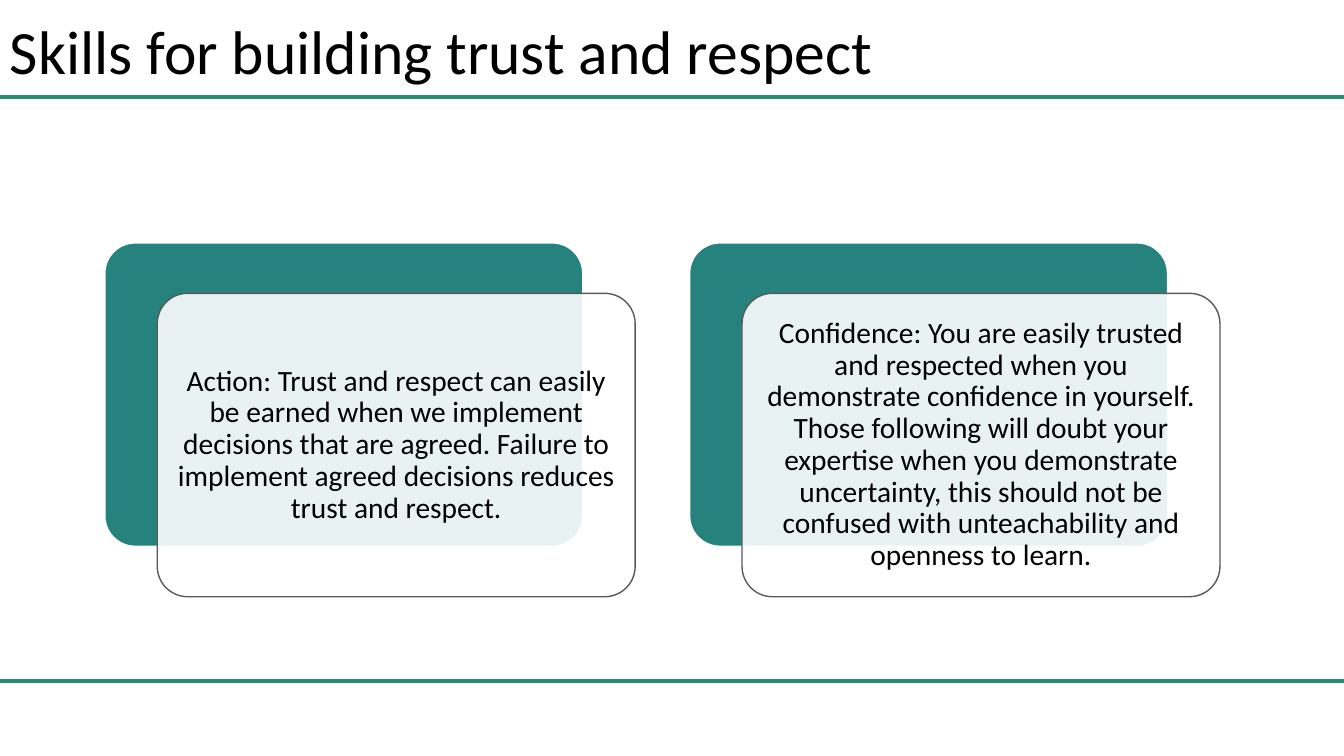
from dataclasses import dataclass

import pptx
import pptx.dml.color
import pptx.enum.shapes
import pptx.enum.text
import pptx.oxml
import pptx.oxml.ns
import pptx.shapes.autoshape
import pptx.slide
import pptx.util

Inches = pptx.util.Inches
Pt = pptx.util.Pt
RGBColor = pptx.dml.color.RGBColor
PP_ALIGN = pptx.enum.text.PP_ALIGN

GREEN = RGBColor(0x2B, 0x8D, 0x6F)
TEAL = RGBColor(0x25, 0x82, 0x7D)
GREY = RGBColor(0x59, 0x59, 0x59)
WHITE = RGBColor(0xFF, 0xFF, 0xFF)
BLACK = RGBColor(0x00, 0x00, 0x00)

SLIDE_W, SLIDE_H = 13.33, 7.5
RULE_YS = (6.76, 0.96)
CARD_W, CARD_H, CARD_TOP = 4.74, 3.01, 2.41
SHIFT_X, SHIFT_Y = 0.52, 0.5  # front panel relative to the back panel
PAD = 0.09


@dataclass(frozen=True)
class Card:
    left: float
    text: str


CARDS = (
    Card(1.04, "Action: Trust and respect can easily be earned when we implement "
               "decisions that are agreed. Failure to implement agreed decisions "
               "reduces trust and respect."),
    Card(6.84, "Confidence: You are easily trusted and respected when you "
               "demonstrate confidence in yourself. Those following will doubt "
               "your expertise when you demonstrate uncertainty, this should not "
               "be confused with unteachability and openness to learn."),
)


def add_rule(s: pptx.slide.Slide, y: float) -> None:
    sp = s.shapes.add_connector(
        pptx.enum.shapes.MSO_CONNECTOR.STRAIGHT,
        Inches(0), Inches(y), Inches(SLIDE_W), Inches(y))
    sp.line.color.rgb = GREEN
    sp.line.width = Pt(3)
    pptx.oxml.ns.qn("a:effectLst")
    sp._element.spPr.append(pptx.oxml.parse_xml(
        f'<a:effectLst {pptx.oxml.ns.nsdecls("a")}/>'))


def add_panel(s: pptx.slide.Slide, left: float, top: float, fill: RGBColor,
              line: RGBColor) -> pptx.shapes.autoshape.Shape:
    sp = s.shapes.add_shape(
        pptx.enum.shapes.MSO_SHAPE.ROUNDED_RECTANGLE,
        Inches(left), Inches(top), Inches(CARD_W), Inches(CARD_H))
    sp.adjustments[0] = 0.1
    sp.shadow.inherit = False
    sp.fill.solid()
    sp.fill.fore_color.rgb = fill
    sp.line.color.rgb = line
    sp.line.width = Pt(1)
    return sp


def set_opacity(sp: pptx.shapes.autoshape.Shape, percent: int) -> None:
    clr = sp._element.spPr.find(
        f'{pptx.oxml.ns.qn("a:solidFill")}/{pptx.oxml.ns.qn("a:srgbClr")}')
    clr.append(pptx.oxml.parse_xml(
        f'<a:alpha {pptx.oxml.ns.nsdecls("a")} val="{percent * 1000}"/>'))


def add_text(s: pptx.slide.Slide, left: float, top: float, width: float,
             height: float, text: str, size: float, align: PP_ALIGN,
             inset_x: float, inset_y: float) -> None:
    sp = s.shapes.add_textbox(
        Inches(left), Inches(top), Inches(width), Inches(height))
    tf = sp.text_frame
    frame_format = {
        "word_wrap": True,
        "vertical_anchor": pptx.enum.text.MSO_ANCHOR.MIDDLE,
        "margin_left": Inches(inset_x), "margin_right": Inches(inset_x),
        "margin_top": Inches(inset_y), "margin_bottom": Inches(inset_y),
    }
    for name, value in frame_format.items():
        setattr(tf, name, value)
    p = tf.paragraphs[0]
    p.alignment = align
    p.line_spacing = 0.9
    r = p.add_run()
    r.text = text
    for name, value in {"name": "Calibri", "size": Pt(size)}.items():
        setattr(r.font, name, value)
    r.font.color.rgb = BLACK


def add_card(s: pptx.slide.Slide, card: Card) -> None:
    left, top = card.left + SHIFT_X, CARD_TOP + SHIFT_Y
    add_panel(s, card.left, CARD_TOP, TEAL, WHITE)
    set_opacity(add_panel(s, left, top, WHITE, GREY), 90)
    add_text(s, left + PAD, top + PAD, CARD_W - 2 * PAD, CARD_H - 2 * PAD,
             card.text, 21, PP_ALIGN.CENTER, PAD, PAD)


def main() -> None:
    prs = pptx.Presentation()
    prs.slide_width, prs.slide_height = Inches(SLIDE_W), Inches(SLIDE_H)
    s = prs.slides.add_slide(prs.slide_layouts[6])

    # Rules
    for y in RULE_YS:
        add_rule(s, y)

    # Title
    add_text(s, 0, 0.02, 11.5, 1.04, "Skills for building trust and respect",
             44, PP_ALIGN.LEFT, 0.1, 0.05)

    # Skill cards
    for card in CARDS:
        add_card(s, card)

    prs.save("out.pptx")


if __name__ == "__main__":
    main()
